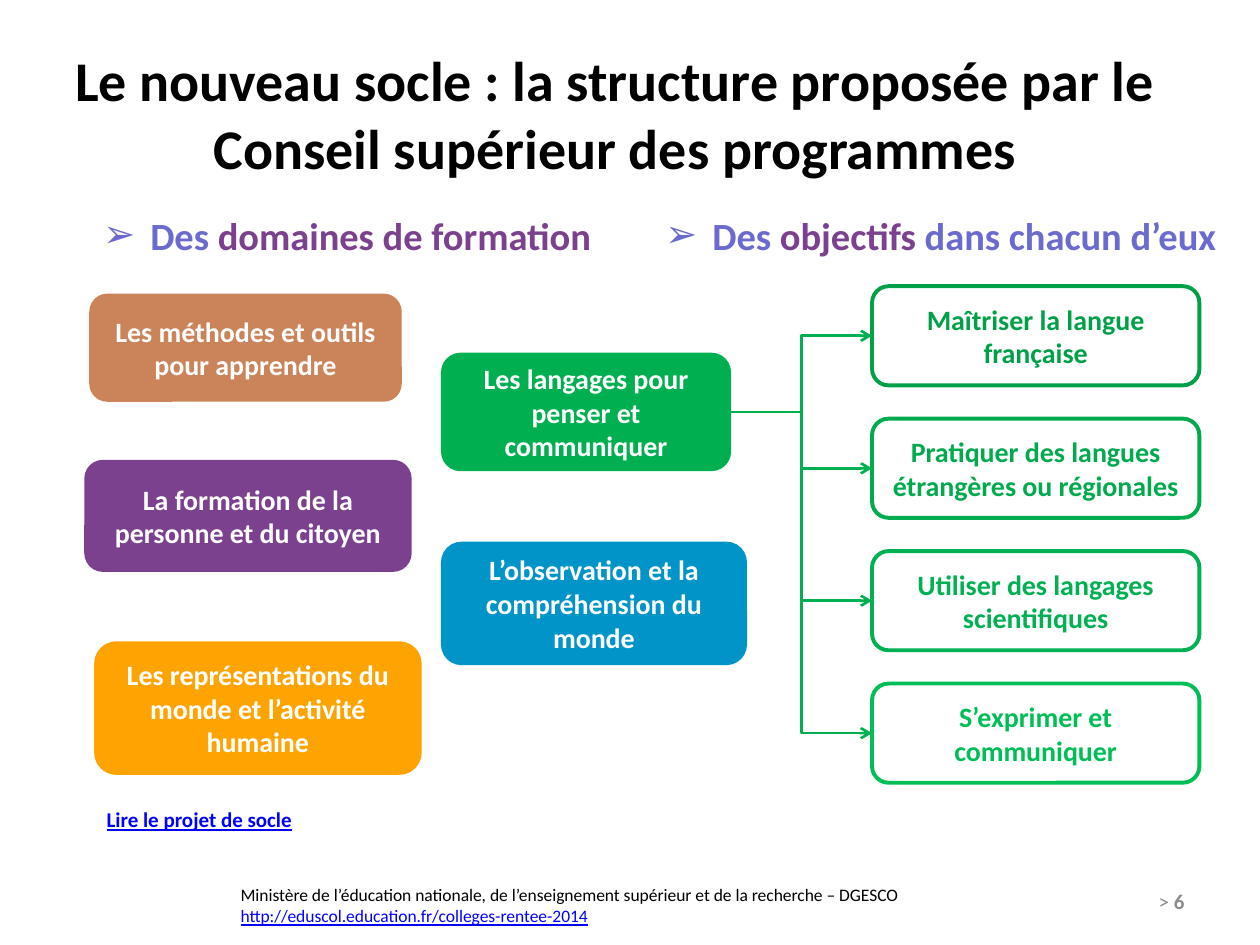
from lxml import etree
from pptx import Presentation
from pptx.dml.color import RGBColor
from pptx.enum import shapes, text
from pptx.oxml.ns import qn
from pptx.util import Cm, Pt

COLORS = {
    "black": "000000", "white": "FFFFFF", "grey": "8C8C8C", "link": "0000FF",
    "lavender": "6B6BCF", "purple": "7B418E", "brown": "CB8459",
    "orange": "FDA403", "blue": "0094C8", "green": "00B050",
    "green 1": "00A048", "green 2": "00AA4D", "green 3": "00B052", "green 4": "00BE56",
}
FONT = "Calibri"

LANGUAGES = "Les langages pour penser et communiquer"
DOMAINS = [  # label, fill, left, top, width, height in cm
    ("Les méthodes et outils pour apprendre", "brown", 1.8, 5.92, 6.3, 2.18),
    ("La formation de la personne et du citoyen", "purple", 1.7, 9.27, 6.6, 2.26),
    ("Les représentations du monde et l’activité humaine", "orange", 1.9, 12.93, 6.6, 2.69),
    (LANGUAGES, "green", 8.89, 7.11, 5.85, 2.39),
    ("L’observation et la compréhension du monde", "blue", 8.89, 10.92, 6.17, 2.49),
]
OBJECTIVES = [
    "Maîtriser la langue française",
    "Pratiquer des langues étrangères ou régionales",
    "Utiliser des langages scientifiques",
    "S’exprimer et communiquer",
]
OBJECTIVE_TOP, OBJECTIVE_PITCH = 5.77, 2.67
LEFT_SIDE, RIGHT_SIDE = 1, 3  # connection sites of a rounded rectangle


def color(name):
    return RGBColor.from_string(COLORS[name])


def add_run(paragraph, words, size, color_name, bold=False, underline=False):
    run = paragraph.add_run()
    run.text = words
    font = run.font
    font.name, font.size, font.bold = FONT, Pt(size), bold
    font.color.rgb = color(color_name)
    if underline:
        font.underline = True


def add_title(slide, words):
    title = slide.shapes.title
    title.left, title.top, title.width, title.height = Cm(0.99), Cm(0.58), Cm(22.83), Cm(3.4)
    frame = title.text_frame
    frame.auto_size = text.MSO_AUTO_SIZE.NONE
    frame.vertical_anchor = text.MSO_ANCHOR.MIDDLE
    paragraph = frame.paragraphs[0]
    paragraph.alignment = text.PP_ALIGN.CENTER
    add_run(paragraph, words, 32, "black", bold=True)


def add_box(slide, words, left, top, width, height, text_color, fill=None, outline=None):
    shape = slide.shapes.add_shape(shapes.MSO_SHAPE.ROUNDED_RECTANGLE,
                                   Cm(left), Cm(top), Cm(width), Cm(height))
    shape.shadow.inherit = False
    if fill:
        shape.fill.solid()
        shape.fill.fore_color.rgb = color(fill)
    else:
        shape.fill.background()
    if outline:
        shape.line.color.rgb = color(outline)
        shape.line.width = Pt(2.25)
    else:
        shape.line.fill.background()
    frame = shape.text_frame
    frame.word_wrap = True
    frame.vertical_anchor = text.MSO_ANCHOR.MIDDLE
    paragraph = frame.paragraphs[0]
    paragraph.alignment = text.PP_ALIGN.CENTER
    add_run(paragraph, words, 16, text_color, bold=True)
    return shape


def add_text(slide, left, top, width, height, wrap=True):
    """Add an empty text box and return its text frame."""
    frame = slide.shapes.add_textbox(Cm(left), Cm(top), Cm(width), Cm(height)).text_frame
    frame.word_wrap = wrap
    return frame


def add_heading(slide, left, width, runs, wrap=True):
    """Add a line with an arrowhead bullet; runs are (words, colour) pairs."""
    paragraph = add_text(slide, left, 4.14, width, 1.19, wrap).paragraphs[0]
    for words, color_name in runs:
        add_run(paragraph, words, 22, color_name, bold=True)
    properties = paragraph._p.get_or_add_pPr()
    properties.set("marL", str(Cm(0.95)))
    properties.set("indent", str(-Cm(0.95)))
    etree.SubElement(properties, qn("a:buFont"), typeface="Wingdings 3")
    properties[-1].set("typeface", "Arial")
    etree.SubElement(properties, qn("a:buChar"), char="➢")


def add_arrow(slide, source, target):
    connector = slide.shapes.add_connector(shapes.MSO_CONNECTOR.ELBOW, 0, 0, 0, 0)
    connector.begin_connect(source, RIGHT_SIDE)
    connector.end_connect(target, LEFT_SIDE)
    connector.line.color.rgb = color("green")
    connector.line.width = Pt(1.5)
    etree.SubElement(connector.line._get_or_add_ln(), qn("a:tailEnd"), type="arrow")
    etree.SubElement(connector._element.spPr, qn("a:effectLst"))


def add_footer(slide):
    frame = add_text(slide, 4.6, 17.7, 16.92, 0.81)
    add_run(frame.paragraphs[0], "Ministère de l’éducation nationale, de l’enseignement "
            "supérieur et de la recherche – DGESCO", 10, "black")
    add_run(frame.add_paragraph(), "http://eduscol.education.fr/colleges-rentee-2014",
            10, "link", underline=True)

    frame = add_text(slide, 18.21, 17.65, 5.92, 1.02)
    frame.vertical_anchor = text.MSO_ANCHOR.MIDDLE
    number = frame.paragraphs[0]
    number.alignment = text.PP_ALIGN.RIGHT
    add_run(number, "> ", 12, "grey")
    add_run(number, "6", 12, "grey", bold=True)


def main():
    presentation = Presentation()
    presentation.slide_width, presentation.slide_height = Cm(25.4), Cm(19.05)
    slide = presentation.slides.add_slide(presentation.slide_layouts[5])

    add_title(slide, "Le nouveau socle : la structure proposée par le "
                     "Conseil supérieur des programmes")
    add_heading(slide, 1.83, 10.97,
                [("Des ", "lavender"), ("domaines de formation", "purple")])
    add_heading(slide, 13.16, 11.76,
                [("Des ", "lavender"), ("objectifs ", "purple"),
                 ("dans chacun d’eux", "lavender")], wrap=False)

    domains = {label: add_box(slide, label, *place, "white", fill=fill)
               for label, fill, *place in DOMAINS}
    for index, label in enumerate(OBJECTIVES):
        shade = f"green {index + 1}"
        objective = add_box(slide, label, 17.58, OBJECTIVE_TOP + index * OBJECTIVE_PITCH,
                            6.6, 2, shade, outline=shade)
        add_arrow(slide, domains[LANGUAGES], objective)

    reading = add_text(slide, 1.9, 16.13, 14.6, 0.76)
    add_run(reading.paragraphs[0], "Lire le projet de socle", 12, "link",
            bold=True, underline=True)
    add_footer(slide)
    presentation.save("out.pptx")


if __name__ == "__main__":
    main()
